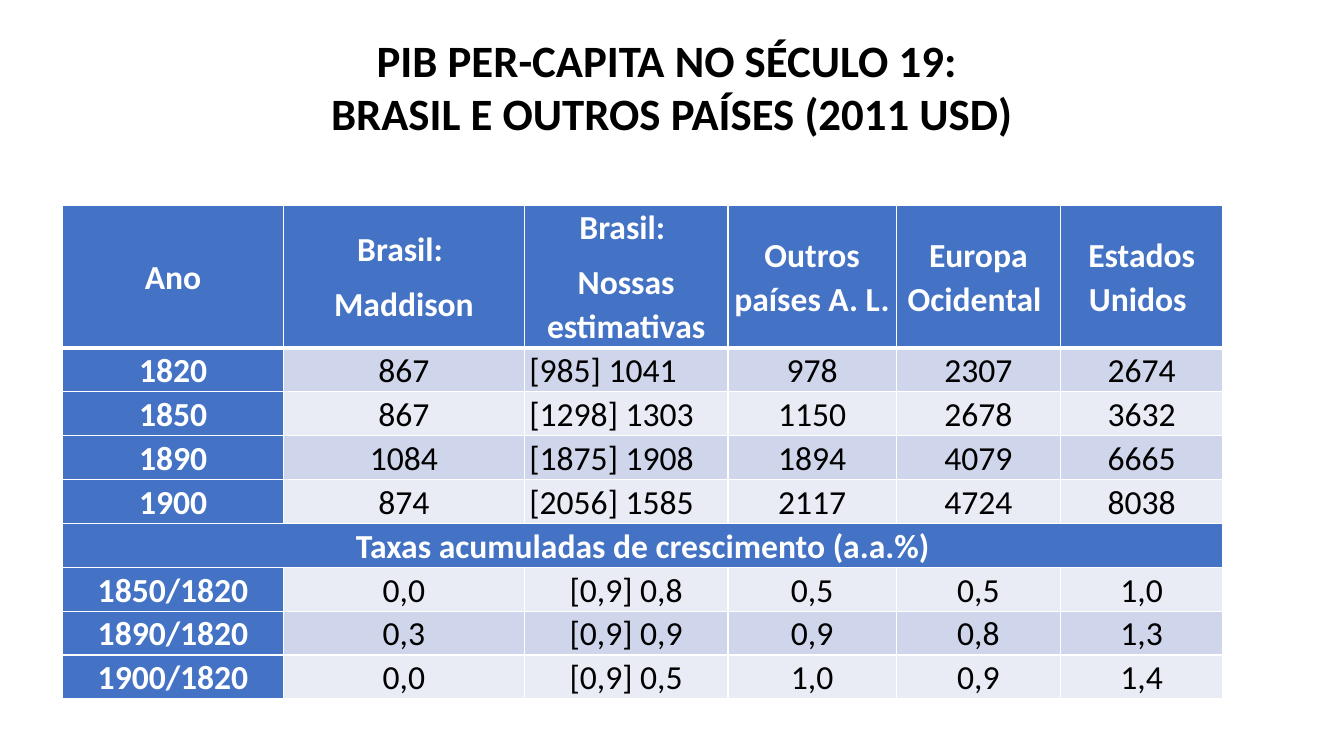
from copy import deepcopy
from lxml.etree import SubElement
from pptx import Presentation
from pptx.dml.color import RGBColor
from pptx.enum.text import MSO_ANCHOR as Anchor, MSO_AUTO_SIZE as AutoSize, PP_ALIGN as Align
from pptx.oxml.ns import qn
from pptx.util import Pt

BLACK = RGBColor(0x00, 0x00, 0x00)
WHITE = RGBColor(0xFF, 0xFF, 0xFF)
BLUE = RGBColor(0x44, 0x72, 0xC4)
BANDS = [RGBColor(0xE9, 0xEB, 0xF5), RGBColor(0xCF, 0xD5, 0xEA)]
FONT = "Calibri"

TITLE = ["PIB PER-CAPITA NO SÉCULO 19: ", "BRASIL E OUTROS PAÍSES (2011 USD)"]
HEADER = ["Ano", "Brasil: \nMaddison", "Brasil: \nNossas estimativas",
          "Outros países A. L. ", "Europa Ocidental ", "Estados Unidos "]
LEVELS = [
    ["1820", "867", "[985] 1041", "978", "2307", "2674"],
    ["1850", "867", "[1298] 1303", "1150", "2678", "3632"],
    ["1890", "1084", "[1875] 1908", "1894", "4079", "6665"],
    ["1900", "874", "[2056] 1585", "2117", "4724", "8038"],
]
BANNER = ["Taxas acumuladas de crescimento (a.a.%)"]
GROWTH = [
    ["1850/1820", "0,0", "[0,9] 0,8", "0,5", "0,5", "1,0"],
    ["1890/1820", "0,3", "[0,9] 0,9", "0,9", "0,8", "1,3"],
    ["1900/1820", "0,0", "[0,9] 0,5", "1,0", "0,9", "1,4"],
]
ROWS = [HEADER, *LEVELS, BANNER, *GROWTH]
ESTIMATES_COLUMN = 2
COLUMN_WIDTHS = [157.7, 172.1, 145.4, 120.2, 117.4, 115.9]
HEADER_HEIGHT, ROW_HEIGHT = 75.6, 24.5


def add_span(para, text, size, color, bold):
    span = para.add_run()
    span.text = text
    font = span.font
    font.name, font.size, font.bold = FONT, Pt(size), bold
    font.color.rgb = color
    return span


def place_title(page, left, top, width, height):
    box = page.shapes.title
    box.left, box.top, box.width, box.height = Pt(left), Pt(top), Pt(width), Pt(height)
    frame = box.text_frame
    frame.word_wrap = True
    frame.auto_size = AutoSize.NONE
    frame.vertical_anchor = Anchor.MIDDLE
    frame.margin_bottom = Pt(42.6)
    para = frame.paragraphs[0]
    para.alignment = Align.CENTER
    first = add_span(para, TITLE[0], 32, BLACK, True)
    para.add_line_break()
    line_break = para._p.find(qn("a:br"))
    line_break.append(deepcopy(first._r.find(qn("a:rPr"))))
    add_span(para, TITLE[1], 32, BLACK, True)


def add_borders(cell, top, bottom):
    properties = cell._tc.get_or_add_tcPr()
    for index, (side, weight) in enumerate([("L", 1), ("R", 1), ("T", top), ("B", bottom)]):
        line = SubElement(properties, qn(f"a:ln{side}"), w=str(Pt(weight)))
        fill = SubElement(line, qn("a:solidFill"))
        SubElement(fill, qn("a:srgbClr"), val=str(WHITE))
        properties.insert(index, line)


def fill_cell(cell, text, fill, color, bold, alignment):
    cell.fill.solid()
    cell.fill.fore_color.rgb = fill
    cell.vertical_anchor = Anchor.MIDDLE
    cell.margin_left = cell.margin_right = Pt(3.6)
    cell.margin_top = cell.margin_bottom = Pt(0)
    frame = cell.text_frame
    for index, line in enumerate(text.split("\n")):
        para = frame.add_paragraph() if index else frame.paragraphs[0]
        para.alignment = alignment
        para.line_spacing = 1.07
        para.space_after = Pt(8)
        add_span(para, line, 24, color, bold)


def place_table(page, left, top, width, height):
    box = page.shapes.add_table(len(ROWS), len(HEADER), Pt(left), Pt(top), Pt(width), Pt(height))
    table = box.table
    table.first_col = True
    for column, column_width in zip(table.columns, COLUMN_WIDTHS):
        column.width = Pt(column_width)
    for r, values in enumerate(ROWS):
        table.rows[r].height = Pt(ROW_HEIGHT if r else HEADER_HEIGHT)
        if values is BANNER:
            table.cell(r, 0).merge(table.cell(r, len(HEADER) - 1))
        for c, text in enumerate(values):
            cell = table.cell(r, c)
            heading = values is HEADER or c == 0
            left_aligned = values in LEVELS and c == ESTIMATES_COLUMN
            fill_cell(cell, text,
                      BLUE if heading else BANDS[r % 2],
                      WHITE if heading else BLACK,
                      heading,
                      Align.LEFT if left_aligned else Align.CENTER)
        for c in range(len(HEADER)):
            add_borders(table.cell(r, c), 3 if r == 1 else 1, 3 if r == 0 else 1)
    box.height = Pt(height)


def main():
    deck = Presentation()
    deck.slide_width, deck.slide_height = Pt(960), Pt(540)
    page = deck.slides.add_slide(deck.slide_layouts[5])
    place_title(page, 66, 28.8, 828, 104.4)
    place_table(page, 44.8, 146.4, 828, 334.8)
    deck.save("out.pptx")


if __name__ == "__main__":
    main()
